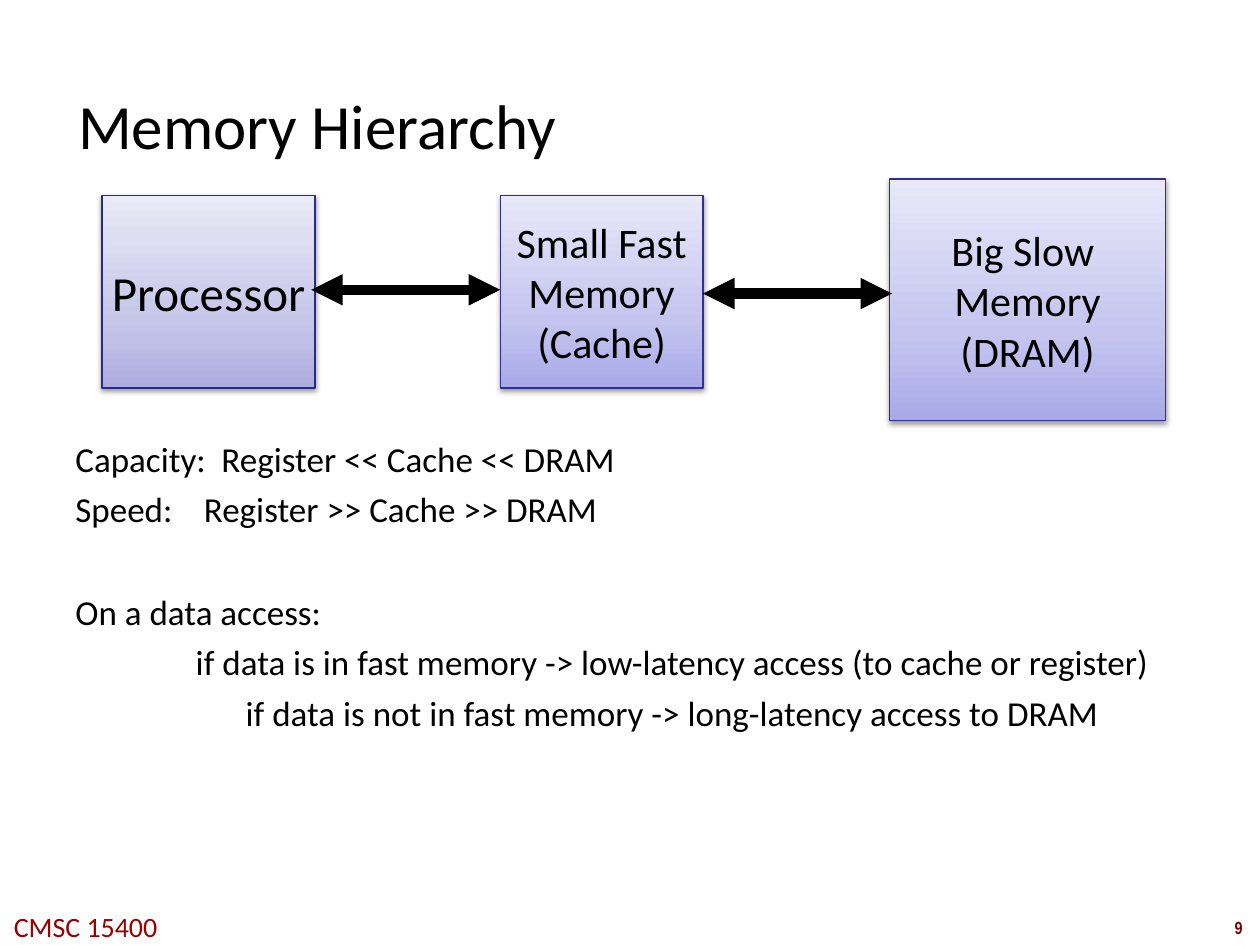
from pptx import Presentation
from pptx.dml.color import RGBColor
from pptx.enum.shapes import MSO_CONNECTOR as Link, MSO_SHAPE as Shape
from pptx.enum.text import MSO_ANCHOR as Anchor, MSO_AUTO_SIZE as Fit, PP_ALIGN as Align
from pptx.oxml import parse_xml
from pptx.oxml.ns import nsdecls, qn
from pptx.util import Inches, Pt

W, H = 10, 7.5
BLACK = "000000"
BLUE = ("2F2F98", ["A9A9E9", "C4C4EF", "E8E8FA"])
GRAY = ("2A2A89", ["ADADE1", "C6C6E9", "E9E9F7"])
STOPS = (0, 35, 100)

# lines, text size, colours, (left, top, width, height)
BLOCKS = [
    (["Processor"], 28, GRAY, (0.81, 1.55, 1.69, 1.53)),
    (["Small Fast", "Memory", "(Cache)"], 24, BLUE, (3.97, 1.55, 1.61, 1.53)),
    (["Big Slow ", "Memory", "(DRAM)"], 24, BLUE, (7.06, 1.42, 2.19, 1.92)),
]
ARROWS = [(2.47, 2.3), (5.58, 2.33)]
REACH = 1.5

# text, space before, tab stop, indented and centred
NOTES = [
    ("Capacity:\tRegister << Cache << DRAM", 0, 1.16, False),
    ("Speed:\tRegister >> Cache >> DRAM", 5, 1.02, False),
    ("On a data access:", 34.4, None, False),
    ("if data is in fast memory -> low-latency access (to cache or register)", 5, None, True),
    ("if data is not in fast memory -> long-latency access to DRAM", 5, None, True),
]


def color(code):
    return RGBColor.from_string(code)


def style(para, size, code=BLACK, name="Calibri", bold=False):
    for run in para.runs:
        font = run.font
        font.size, font.name, font.bold = Pt(size), name, bold
        font.color.rgb = color(code)


def text_box(slide, area, text, wrap=True):
    frame = slide.shapes.add_textbox(*map(Inches, area)).text_frame
    frame.word_wrap = wrap
    frame.text = text
    return frame


def label(slide, area, text, size, code, name, bold=False):
    """Add a one-line footer text that does not wrap."""
    frame = text_box(slide, area, text, False)
    frame.auto_size = Fit.SHAPE_TO_FIT_TEXT
    para = frame.paragraphs[0]
    para.alignment = Align.CENTER
    style(para, size, code, name, bold)


def shade(shape, codes):
    """Give the shape a three-stop gradient and a soft shadow below."""
    shape.fill.background()
    props = shape.fill._xPr
    stops = "".join(f'<a:gs pos="{pos * 1000}"><a:srgbClr val="{code}"/></a:gs>'
                    for pos, code in zip(STOPS, codes))
    props.replace(props.find(qn("a:noFill")), parse_xml(
        f'<a:gradFill {nsdecls("a")} rotWithShape="1"><a:gsLst>{stops}</a:gsLst>'
        '<a:lin ang="16200000" scaled="0"/></a:gradFill>'))
    props.append(parse_xml(
        f'<a:effectLst {nsdecls("a")}><a:outerShdw blurRad="{Pt(3.1)}" dist="{Pt(1.6)}" '
        'dir="5400000" rotWithShape="0"><a:srgbClr val="000000"><a:alpha val="38000"/>'
        '</a:srgbClr></a:outerShdw></a:effectLst>'))


def block(slide, lines, size, tones, area):
    edge, codes = tones
    shape = slide.shapes.add_shape(Shape.RECTANGLE, *map(Inches, area))
    shape.line.color.rgb = color(edge)
    shape.line.width = Pt(0.75)
    shade(shape, codes)
    frame = shape.text_frame
    frame.word_wrap = False
    frame.vertical_anchor = Anchor.MIDDLE
    frame.text = "\n".join(lines)
    for para in frame.paragraphs:
        para.alignment = Align.CENTER
        style(para, size)


def arrow(slide, x, y):
    link = slide.shapes.add_connector(
        Link.STRAIGHT, *map(Inches, (x, y, x + REACH, y)))
    link.line.color.rgb = color(BLACK)
    link.line.width = Pt(6)
    line = link.line._get_or_add_ln()
    for end in ("headEnd", "tailEnd"):
        line.append(parse_xml(f'<a:{end} {nsdecls("a")} type="triangle"/>'))
    link._element.spPr.append(parse_xml(f'<a:effectLst {nsdecls("a")}/>'))


def notes(slide, area):
    frame = text_box(slide, area, "\n".join(note[0] for note in NOTES))
    for para, (_, gap, tab, inner) in zip(frame.paragraphs, NOTES):
        para.space_before = Pt(gap)
        props = para._p.get_or_add_pPr()
        if tab:
            props.append(parse_xml(
                f'<a:tabLst {nsdecls("a")}><a:tab pos="{Inches(tab)}" algn="l"/></a:tabLst>'))
        if inner:
            para.level = 1
            para.alignment = Align.CENTER
            props.set("marL", str(Inches(0.5)))
            props.set("indent", "0")
        style(para, 20)


def main():
    deck = Presentation()
    deck.slide_width, deck.slide_height = Inches(W), Inches(H)
    slide = deck.slides.add_slide(deck.slide_layouts[6])

    label(slide, (9.66, 7.23, 0.34, 0.27), "9", 10, "800000", "Arial Narrow", True)
    label(slide, (-0.03, 7.17, 1.42, 0.37), "CMSC 15400", 16, "990000", "Calibri")

    title = text_box(slide, (0.58, 0.58, 8.5, 0.82), "Memory Hierarchy")
    title.vertical_anchor = Anchor.MIDDLE
    title.margin_left = title.margin_right = Inches(0.04)
    title.margin_top = title.margin_bottom = Inches(0.04)
    style(title.paragraphs[0], 36)

    notes(slide, (0.5, 3.42, 9.17, 4.33))
    for item in BLOCKS:
        block(slide, *item)
    for spot in ARROWS:
        arrow(slide, *spot)
    deck.save("out.pptx")


if __name__ == "__main__":
    main()
